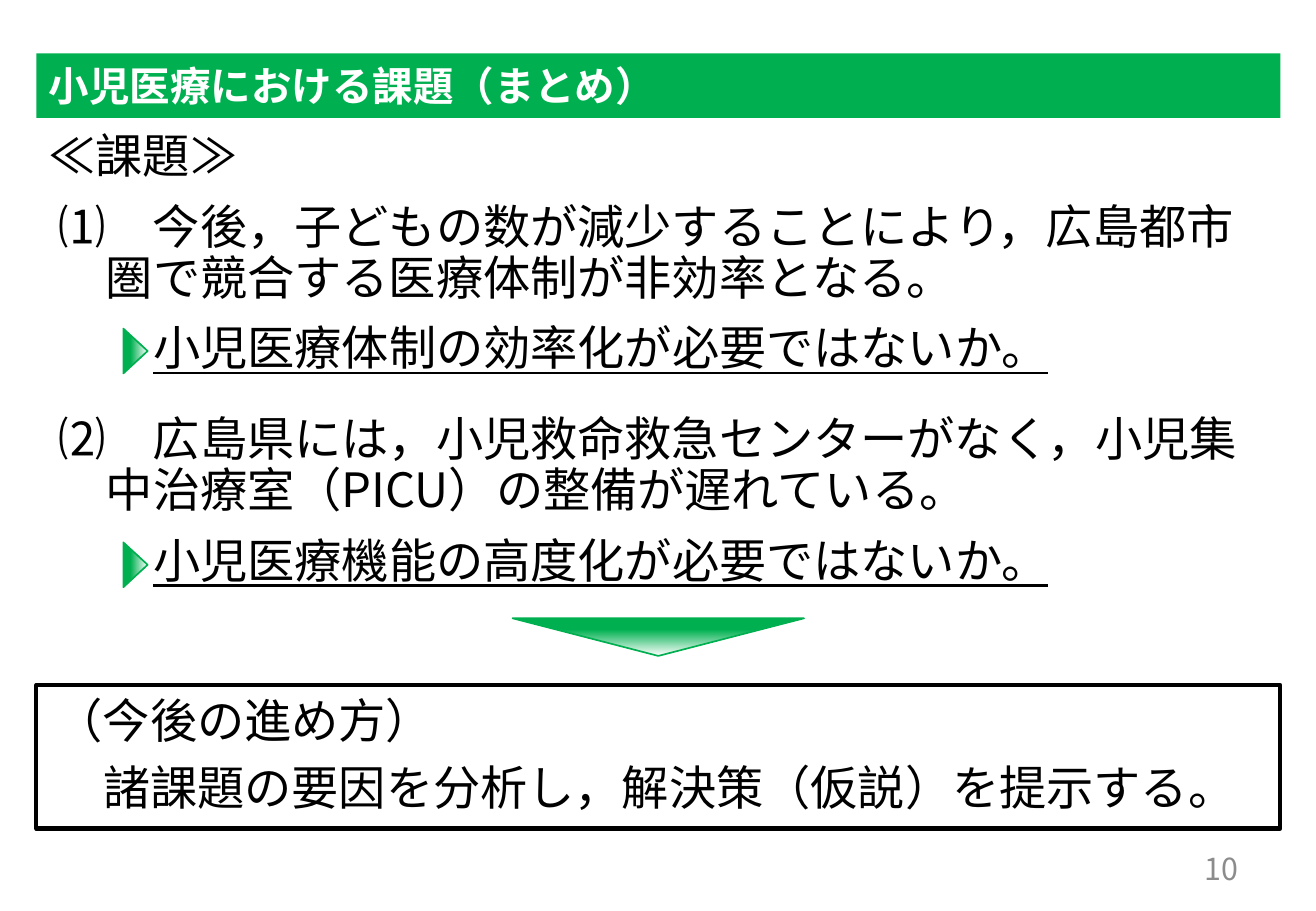
from typing import NamedTuple

from lxml.etree import SubElement
from pptx import Presentation
from pptx.dml.color import RGBColor
from pptx.enum.shapes import MSO_SHAPE
from pptx.enum.text import MSO_ANCHOR, MSO_AUTO_SIZE, PP_ALIGN
from pptx.oxml import parse_xml
from pptx.oxml.ns import nsdecls, qn
from pptx.util import Pt

FONT = "Noto Sans CJK JP"
GREEN = RGBColor(0x00, 0xB0, 0x50)
WHITE = RGBColor(0xFF, 0xFF, 0xFF)
BLACK = RGBColor(0x00, 0x00, 0x00)
GRAY = RGBColor(0x8C, 0x8C, 0x8C)

# Shared left edge and width of the title bar, the list and the plan box
LEFT, WIDTH = 21.6, 737.3
EM = 28  # body text size, and the unit of indents


class Line(NamedTuple):
    text: str
    margin: float = 0
    indent: float = 0
    after: float = 0
    pitch: float | None = None
    under: bool = False


class Mark(NamedTuple):
    left: float
    top: float
    width: float
    height: float
    turn: float


ISSUES = [
    Line("≪課題≫", after=12),
    Line("⑴\u3000今後，子どもの数が減少することにより，広島都市\v圏で競合する医療体制が非効率となる。",
         EM + 6, -EM, 12, 30),
    Line("小児医療体制の効率化が必要ではないか。", 2 * EM + 6, 0, 24, 30, True),
    Line("⑵\u3000広島県には，小児救命救急センターがなく，小児集\v中治療室（PICU）の整備が遅れている。",
         EM + 6, -EM, 12, 30),
    Line("小児医療機能の高度化が必要ではないか。", 2 * EM + 6, 0, 12, 30, True),
]
PLAN = [
    Line("（今後の進め方）", after=6),
    Line("諸課題の要因を分析し，解決策（仮説）を提示する。", EM, after=6),
]
MARKS = [
    Mark(303.8, 366.5, 172.8, 22.3, 180),
    Mark(67, 200.9, 26.6, 14.4, 90),
    Mark(67, 327.6, 26.6, 14.4, 90),
]


def place(shape, left: float, top: float, width: float, height: float) -> None:
    shape.left, shape.top = Pt(left), Pt(top)
    shape.width, shape.height = Pt(width), Pt(height)


def style(para, size: float, color: RGBColor, bold: bool = False) -> None:
    font = para.font
    font.name, font.size, font.bold = FONT, Pt(size), bold
    font.color.rgb = color
    # East Asian glyphs need their own typeface entry
    base = para._p.pPr.find(qn("a:defRPr"))
    SubElement(base, qn("a:ea")).set("typeface", FONT)


def write(frame, lines: list[Line]) -> None:
    frame.word_wrap = True
    frame.auto_size = MSO_AUTO_SIZE.NONE
    frame.vertical_anchor = MSO_ANCHOR.TOP
    for i, line in enumerate(lines):
        para = frame.add_paragraph() if i else frame.paragraphs[0]
        para.text = line.text
        para.alignment = PP_ALIGN.LEFT
        para.space_before, para.space_after = Pt(0), Pt(line.after)
        if line.pitch:
            para.line_spacing = Pt(line.pitch)
        props = para._p.get_or_add_pPr()
        props.set("marL", str(Pt(line.margin)))
        props.set("indent", str(Pt(line.indent)))
        SubElement(props, qn("a:buNone"))
        style(para, EM, BLACK)
        para.font.underline = line.under


def draw_mark(shapes, mark: Mark) -> None:
    shape = shapes.add_shape(MSO_SHAPE.ISOSCELES_TRIANGLE, *map(Pt, mark[:4]))
    shape.rotation = mark.turn
    shape.shadow.inherit = False
    shape.line.color.rgb, shape.line.width = GREEN, Pt(1)
    # Green base fading to a white tip
    stops = "".join(
        f'<a:gs pos="{pos}000"><a:srgbClr val="{color}"/></a:gs>'
        for pos, color in ((0, GREEN), (30, GREEN), (100, WHITE)))
    fade = parse_xml(
        f'<a:gradFill {nsdecls("a")} rotWithShape="1"><a:gsLst>{stops}</a:gsLst>'
        '<a:lin ang="16200000" scaled="0"/></a:gradFill>')
    shape._element.spPr.find(qn("a:prstGeom")).addnext(fade)


def main() -> None:
    deck = Presentation()
    deck.slide_width, deck.slide_height = Pt(780), Pt(540)
    slide = deck.slides.add_slide(deck.slide_layouts[1])
    shapes = slide.shapes

    # Title bar
    title = shapes.title
    place(title, LEFT, 31.7, WIDTH, 38.2)
    title.fill.solid()
    title.fill.fore_color.rgb = GREEN
    frame = title.text_frame
    frame.text = "小児医療における課題（まとめ）"
    frame.auto_size = MSO_AUTO_SIZE.NONE
    frame.vertical_anchor = MSO_ANCHOR.MIDDLE
    frame.paragraphs[0].alignment = PP_ALIGN.LEFT
    style(frame.paragraphs[0], 24, WHITE, True)

    # Issues
    body = slide.placeholders[1]
    place(body, LEFT, 71.3, WIDTH, 345.6)
    write(body.text_frame, ISSUES)

    # Next steps
    box = shapes.add_shape(
        MSO_SHAPE.RECTANGLE, Pt(LEFT), Pt(406.1), Pt(WIDTH), Pt(85))
    box.shadow.inherit = False
    box.fill.background()
    box.line.color.rgb, box.line.width = BLACK, Pt(2.5)
    box.text_frame.margin_left = Pt(11.5)
    box.text_frame.margin_right = Pt(5.8)
    write(box.text_frame, PLAN)

    # Arrowheads
    for mark in MARKS:
        draw_mark(shapes, mark)

    # Page number
    page = shapes.add_textbox(Pt(558.7), Pt(500.4), Pt(182.2), Pt(28.8))
    frame = page.text_frame
    frame.text = "10"
    frame.word_wrap = True
    frame.vertical_anchor = MSO_ANCHOR.MIDDLE
    frame.paragraphs[0].alignment = PP_ALIGN.RIGHT
    style(frame.paragraphs[0], 18, GRAY)

    deck.save("out.pptx")


if __name__ == "__main__":
    main()
